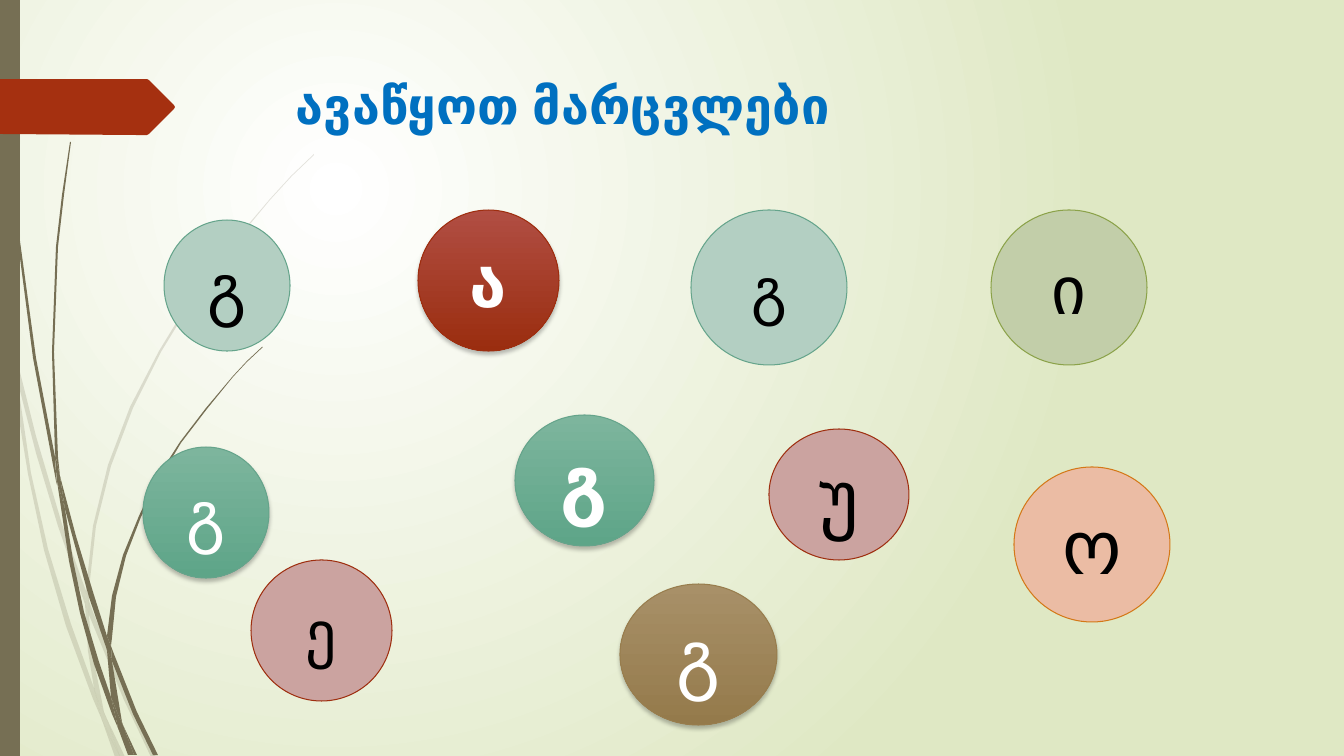
from lxml.etree import SubElement
from pptx import Presentation
from pptx.dml.color import RGBColor as RGB
from pptx.enum.shapes import MSO_SHAPE as SHAPE
from pptx.enum.text import MSO_ANCHOR as ANCHOR, PP_ALIGN as ALIGN
from pptx.oxml.ns import qn
from pptx.util import Pt

PX = 914400 / 100.8  # EMU in one px
FONT = "Quicksand"
COLORS = {
    "white": "FFFFFF", "black": "000000", "title": "0070C0",
    "meadow": "DFE8C4", "stem": "766F54", "arrow": "A53010",
}
# Ball styles: fill (two colours make a gradient with a shadow), line, text
STYLES = {
    "pale green": (["B3CFC2"], "65A48B", "black"),
    "pale red": (["CBA3A0"], "9E2E0F", "black"),
    "pale olive": (["C2CEA9"], "8BA249", "black"),
    "pale orange": (["EBBCA4"], "D47817", "black"),
    "green": (["7DB59D", "5EA588"], "65A48B", "white"),
    "red": (["B14E43", "9A2D0F"], "9E2E0F", "white"),
    "brown": (["A89068", "947A4B"], "987D4D", "white"),
}


def paint(fill, colors):
    """Fill with one colour, or with a gradient from the first to the second."""
    if len(colors) == 1:
        fill.solid()
        fill.fore_color.rgb = RGB.from_string(colors[0])
        return
    fill.gradient()
    for stop, color in zip(fill.gradient_stops, colors):
        stop.color.rgb = RGB.from_string(color)


def write(shape, text, color, align, anchor, **font_format):
    frame = shape.text_frame
    frame.word_wrap = True
    frame.vertical_anchor = anchor
    paragraph = frame.paragraphs[0]
    paragraph.alignment = align
    run = paragraph.add_run()
    run.text = text
    run.font.color.rgb = RGB.from_string(COLORS[color])
    for name, value in {"name": FONT, **font_format}.items():
        setattr(run.font, name, value)


presentation = Presentation()
presentation.slide_width = round(1344 * PX)
presentation.slide_height = round(756 * PX)
slide = presentation.slides.add_slide(presentation.slide_layouts[6])
shapes = slide.shapes

# Background: round glow centred in the upper left quarter
background = slide.background.fill
paint(background, [COLORS["white"], COLORS["meadow"]])
gradient = slide.element.find(".//" + qn("a:gradFill"))
gradient.remove(gradient.find(qn("a:lin")))
glow = SubElement(gradient, qn("a:path"), {"path": "circle"})
SubElement(glow, qn("a:fillToRect"),
           {"l": "50000", "t": "50000", "r": "100000", "b": "100000"})

# Outlines of the grass pieces and the arrow
PALE_GRASS = [
    [(11, 353), (9, 325), (0, 284), (0, 301), (10, 347)],
    [(58, 526), (85, 604), (86, 591), (62, 524), (36, 436), (14, 348),
     (17, 379), (36, 453)],
    [(93, 612), (89, 601), (89, 615), (124, 700), (151, 757), (156, 757),
     (128, 698)],
    [(120, 757), (125, 757), (106, 717)],
    [(94, 688), (71, 624), (48, 549), (31, 473), (17, 379), (11, 353),
     (18, 413), (28, 474), (44, 550), (66, 626), (93, 699), (102, 720),
     (100, 713)],
    [(85, 604), (88, 651), (94, 688), (97, 698), (106, 717), (104, 712),
     (92, 651), (89, 615), (89, 613)],
    [(89, 589), (96, 526), (111, 466), (133, 408), (161, 352), (194, 298),
     (231, 247), (270, 200), (292, 176), (314, 155), (314, 154), (291, 176),
     (270, 199), (230, 246), (192, 297), (159, 351), (130, 407), (108, 465),
     (93, 526), (86, 589), (86, 591), (89, 601)],
    [(102, 720), (115, 757), (120, 757)],
    [(89, 613), (89, 615), (89, 601), (86, 591), (85, 604)],
    [(97, 698), (94, 688), (100, 713), (102, 720), (120, 757), (106, 717)],
]
DARK_GRASS = [
    [(7, 111), (17, 235), (33, 358), (56, 481), (57, 485), (55, 461),
     (55, 457), (36, 358), (19, 234), (8, 110), (5, 48), (4, 0), (3, 0),
     (4, 48)],
    [(89, 597), (107, 650), (107, 638), (107, 636), (94, 595), (76, 536),
     (60, 476), (65, 509)],
    [(114, 654), (111, 646), (112, 661), (133, 714), (153, 755), (158, 755),
     (137, 712)],
    [(111, 697), (99, 662), (84, 612), (73, 560), (65, 509), (57, 481),
     (69, 561), (80, 613), (94, 664), (112, 714), (118, 728), (117, 723)],
    [(60, 476), (58, 457), (54, 352), (58, 247), (64, 195), (71, 142),
     (70, 142), (62, 195), (56, 247), (52, 352), (55, 453)],
    [(134, 755), (137, 755), (123, 725)],
    [(57, 481), (65, 509), (60, 476), (55, 453), (55, 457)],
    [(112, 638), (116, 597), (126, 556), (141, 517), (159, 480), (181, 443),
     (207, 409), (233, 377), (247, 362), (263, 347), (262, 347), (247, 361),
     (233, 376), (206, 408), (180, 442), (157, 478), (139, 516), (123, 555),
     (112, 596), (107, 636), (111, 646)],
    [(118, 728), (128, 755), (132, 755)],
    [(107, 650), (111, 697), (117, 712), (123, 725), (122, 722), (112, 661),
     (110, 656)],
    [(107, 650), (110, 656), (112, 661), (111, 646), (107, 636), (107, 638)],
    [(117, 712), (111, 697), (117, 723), (118, 728), (131, 755), (134, 755),
     (123, 725)],
]
SIDE_BAR = [(0, 0), (20, 0), (20, 756), (0, 756)]
ARROW = [(174, 109), (149, 134), (147, 135), (137, 135), (0, 134), (0, 79),
         (137, 79), (147, 79), (149, 80), (174, 105), (175, 107)]

# Grass, side bar and arrow
for color, opacity, outlines in [
    ("stem", 20, PALE_GRASS), ("stem", 100, DARK_GRASS),
    ("stem", 100, [SIDE_BAR]), ("arrow", 100, [ARROW]),
]:
    for outline in outlines:
        if outline is SIDE_BAR:
            shape = shapes.add_shape(
                SHAPE.RECTANGLE, 0, 0, *(round(v * PX) for v in SIDE_BAR[2]))
        else:
            builder = shapes.build_freeform(*outline[0], scale=PX)
            builder.add_line_segments(outline[1:], close=True)
            shape = builder.convert_to_shape()
        shape.shadow.inherit = False
        shape.line.fill.background()
        paint(shape.fill, [COLORS[color]])
        if opacity < 100:
            tint = shape.element.spPr.find(".//" + qn("a:srgbClr"))
            SubElement(tint, qn("a:alpha"), {"val": str(opacity * 1000)})

# Title
title = shapes.add_textbox(*(round(v * PX) for v in (286, 69, 983, 141)))
write(title, "ავაწყოთ მარცვლები", "title", ALIGN.LEFT, ANCHOR.TOP,
      size=Pt(36), bold=True)

# Letter balls: letter, style, box, size, bold
BALLS = [
    ("გ", "pale green", (164, 220, 126, 131), 48, False),
    ("ა", "red", (418, 210, 141, 141), 48, True),
    ("გ", "green", (143, 447, 126, 131), 48, False),
    ("ე", "pale red", (251, 560, 141, 141), 44, False),
    ("გ", "pale green", (691, 210, 156, 155), 44, False),
    ("გ", "brown", (620, 584, 157, 141), 54, False),
    ("ი", "pale olive", (991, 210, 156, 155), 48, False),
    ("ო", "pale orange", (1014, 467, 156, 155), 54, False),
    ("გ", "green", (515, 415, 139, 131), 54, True),
    ("უ", "pale red", (769, 429, 140, 131), 54, False),
]
for letter, style, box, size, bold in BALLS:
    fill_colors, line_color, text_color = STYLES[style]
    ball = shapes.add_shape(SHAPE.OVAL, *(round(v * PX) for v in box))
    ball.shadow.inherit = False
    paint(ball.fill, fill_colors)
    ball.line.color.rgb = RGB.from_string(line_color)
    ball.line.width = Pt(0.75)
    if len(fill_colors) == 2:
        ball.fill.gradient_angle = 270
        effects = ball.element.spPr.find(qn("a:effectLst"))
        shadow = SubElement(effects, qn("a:outerShdw"), {
            "blurRad": str(Pt(3)), "dist": str(Pt(2)), "dir": "5400000",
            "algn": "ctr", "rotWithShape": "0"})
        shade = SubElement(shadow, qn("a:srgbClr"), {"val": COLORS["black"]})
        SubElement(shade, qn("a:alpha"), {"val": "25000"})
    write(ball, letter, text_color, ALIGN.CENTER, ANCHOR.MIDDLE,
          size=Pt(size), bold=bold)

presentation.save("out.pptx")
